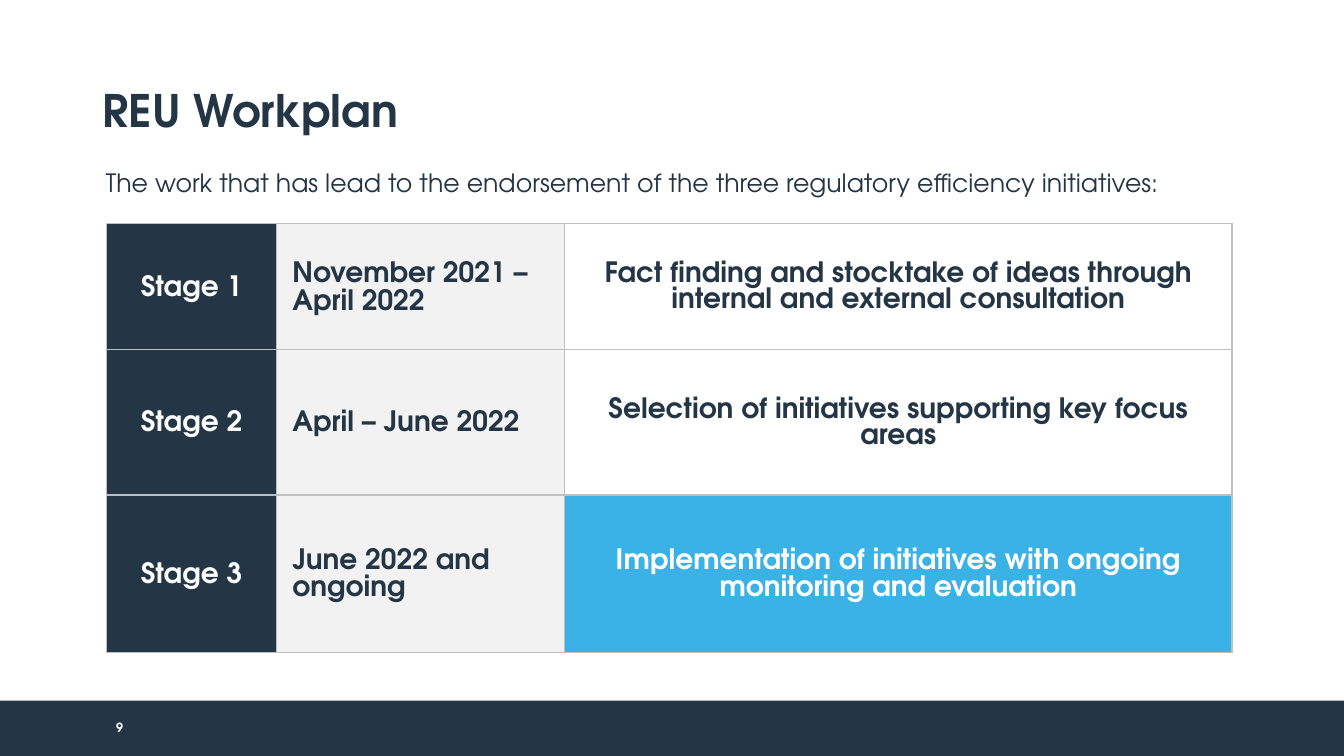
"""Build the REU Workplan slide with its table of stages."""
from lxml import etree
from pptx import Presentation
from pptx.dml.color import RGBColor
from pptx.enum.shapes import MSO_SHAPE
from pptx.enum.text import MSO_ANCHOR, MSO_AUTO_SIZE, PP_ALIGN
from pptx.oxml.ns import qn
from pptx.util import Pt

PX = 9144
FONT = "TeX Gyre Adventor"
NAVY = RGBColor(0x24, 0x36, 0x45)
BLUE = RGBColor(0x3A, 0xB2, 0xE5)
PALE = RGBColor(0xF2, 0xF2, 0xF2)
WHITE = RGBColor(0xFF, 0xFF, 0xFF)
BORDER = RGBColor(0xBF, 0xBF, 0xBF)

LEFT, CENTER, RIGHT = PP_ALIGN.LEFT, PP_ALIGN.CENTER, PP_ALIGN.RIGHT
MIDDLE, TOP = MSO_ANCHOR.MIDDLE, MSO_ANCHOR.TOP
RECTANGLE = MSO_SHAPE.RECTANGLE
NO_AUTOFIT = MSO_AUTO_SIZE.NONE

COLUMN_WIDTHS = (168, 286, 662)
ROW_HEIGHTS = (125, 144, 156)
SPACED = {"line_spacing": 1.07, "space_after": Pt(8)}
STAGE = {"fill": NAVY, "color": WHITE, "alignment": CENTER, **SPACED}
PERIOD = {"fill": PALE, "color": NAVY, "alignment": LEFT, **SPACED}
TASK = {"fill": WHITE, "color": NAVY, "alignment": CENTER}
CURRENT_TASK = {"fill": BLUE, "color": WHITE, "alignment": CENTER, **SPACED}
STAGES = (
    ("Stage 1", "November 2021 – April 2022",
     "Fact finding and stocktake of ideas through internal and external consultation", TASK),
    ("Stage 2", "April – June 2022",
     "Selection of initiatives supporting key focus areas", TASK),
    ("Stage 3", "June 2022 and ongoing",
     "Implementation of initiatives with ongoing monitoring and evaluation", CURRENT_TASK),
)


def scale(*lengths):
    """Turn px lengths into EMU."""
    return [length * PX for length in lengths]


def set_attributes(target, values):
    """Set each named attribute on the target."""
    for name, value in values.items():
        setattr(target, name, value)


def write_text(text_frame, text, size, color, bold=False, **paragraph_format):
    """Write one formatted paragraph into a text frame."""
    text_frame.word_wrap = True
    paragraph = text_frame.paragraphs[0]
    set_attributes(paragraph, paragraph_format)
    run = paragraph.add_run()
    run.text = text
    set_attributes(run.font, {"name": FONT, "size": Pt(size), "bold": bold})
    run.font.color.rgb = color


def add_footer_bar(slide):
    """Add the dark bar along the bottom edge."""
    bar = slide.shapes.add_shape(RECTANGLE, *scale(0, 695, 1333, 55))
    bar.shadow.inherit = False
    bar.fill.solid()
    bar.fill.fore_color.rgb = NAVY
    bar.line.fill.background()


def place_title(slide, text):
    """Move the title placeholder and fill it."""
    title = slide.shapes.title
    set_attributes(title, dict(zip(("left", "top", "width", "height"), scale(92, 40, 1150, 145))))
    set_attributes(title.text_frame, {"vertical_anchor": MIDDLE, "auto_size": NO_AUTOFIT})
    write_text(title.text_frame, text, 32, NAVY, True, alignment=LEFT, line_spacing=0.9)


def add_text(slide, box, text, size, color, frame_format, **text_format):
    """Add a text box holding one paragraph."""
    text_frame = slide.shapes.add_textbox(*scale(*box)).text_frame
    set_attributes(text_frame, frame_format)
    write_text(text_frame, text, size, color, **text_format)


def add_borders(cell):
    """Draw a thin grey line on all four sides of a cell."""
    properties = cell._tc.get_or_add_tcPr()
    for index, side in enumerate(("a:lnL", "a:lnR", "a:lnT", "a:lnB")):
        line = etree.Element(qn(side), w=str(Pt(1)))
        fill = etree.SubElement(line, qn("a:solidFill"))
        etree.SubElement(fill, qn("a:srgbClr"), val=str(BORDER))
        properties.insert(index, line)


def fill_cell(cell, text, fill, color, **paragraph_format):
    """Format one table cell and write its text."""
    cell.fill.solid()
    cell.fill.fore_color.rgb = fill
    margins = dict(zip(("margin_left", "margin_top", "margin_right", "margin_bottom"),
                       scale(16, 2, 16, 0)))
    set_attributes(cell, {"vertical_anchor": MIDDLE, **margins})
    write_text(cell.text_frame, text, 20, color, True, **paragraph_format)
    add_borders(cell)


def add_stage_table(slide):
    """Add the table with one row per stage."""
    box = scale(106, 222, sum(COLUMN_WIDTHS), sum(ROW_HEIGHTS))
    table = slide.shapes.add_table(len(STAGES), len(COLUMN_WIDTHS), *box).table
    set_attributes(table, {"first_row": False, "horz_banding": False})
    for column, width in zip(table.columns, scale(*COLUMN_WIDTHS)):
        column.width = width
    for row, height, (stage, period, task, task_style) in zip(
            table.rows, scale(*ROW_HEIGHTS), STAGES):
        row.height = height
        contents = ((stage, STAGE), (period, PERIOD), (task, task_style))
        for cell, (text, style) in zip(row.cells, contents):
            fill_cell(cell, text, **style)


def main():
    """Build and save the slide."""
    presentation = Presentation()
    presentation.slide_width, presentation.slide_height = scale(1333, 750)
    slide = presentation.slides.add_slide(presentation.slide_layouts[5])
    add_footer_bar(slide)
    place_title(slide, "REU Workplan")
    add_text(slide, (92, 702, 40, 40), "9", 9, WHITE,
             {"vertical_anchor": MIDDLE, "margin_left": 0},
             bold=True, alignment=RIGHT, space_after=Pt(6))
    add_stage_table(slide)
    add_text(slide, (95, 161, 1127, 40),
             "The work that has lead to the endorsement of the three regulatory efficiency initiatives:",
             18, NAVY, {"vertical_anchor": TOP})
    presentation.save("out.pptx")


if __name__ == "__main__":
    main()
